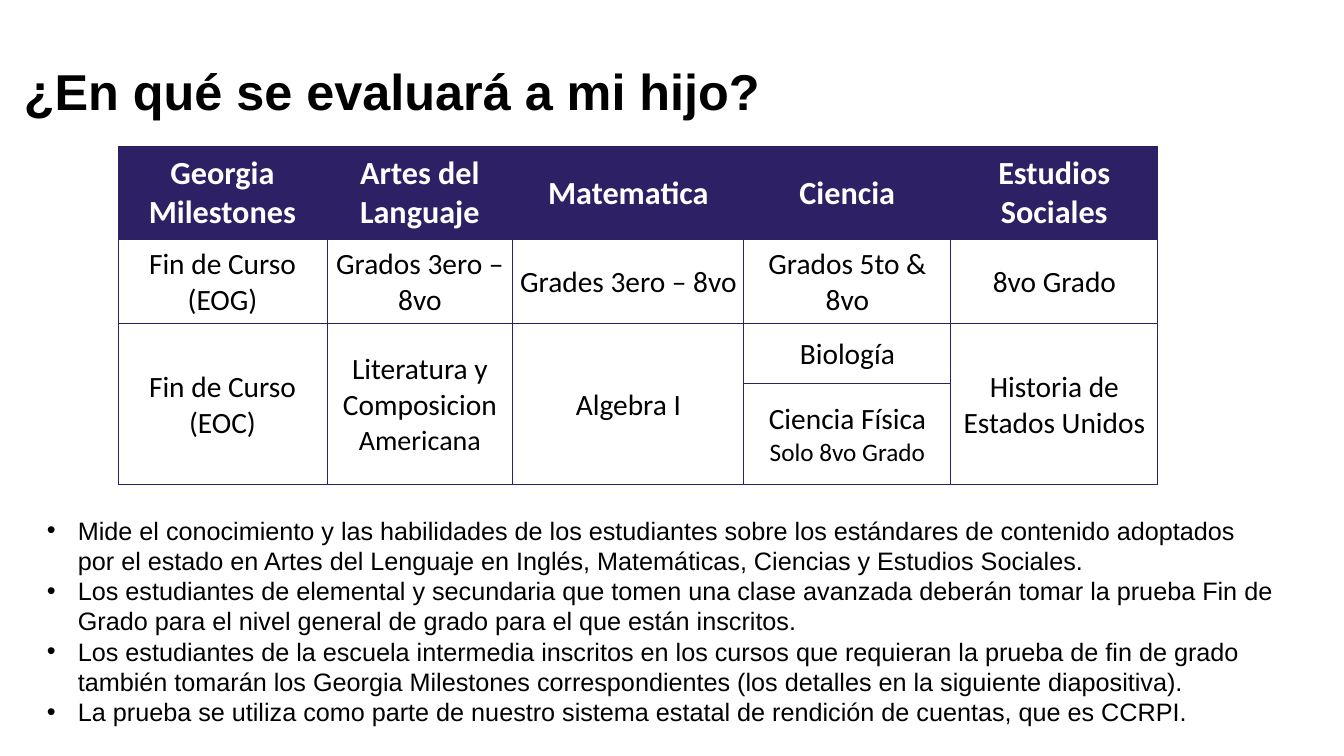
from lxml import etree
from pptx import Presentation
from pptx.dml.color import RGBColor
from pptx.enum.text import MSO_ANCHOR, PP_ALIGN
from pptx.oxml.ns import qn
from pptx.util import Emu, Pt

CENTER, LEFT = PP_ALIGN.CENTER, PP_ALIGN.LEFT
TOP, MIDDLE = MSO_ANCHOR.TOP, MSO_ANCHOR.MIDDLE
EMU_PER_PX = 914400 / 100.8
COLORS = {"ink": "000000", "paper": "FFFFFF", "purple": "2D2065"}

COLUMN_WIDTHS = [209, 186, 231, 207, 207]
ROW_HEIGHTS = [93, 85, 60, 101]
# Each cell is a list of paragraphs: text, or (text, size)
TABLE_ROWS = [
    [["Georgia Milestones"], ["Artes del Languaje"], ["Matematica"],
     ["Ciencia"], ["Estudios", "Sociales"]],
    [["Fin de Curso (EOG)"], ["Grados 3ero – 8vo"], ["Grades 3ero – 8vo"],
     ["Grados 5to & 8vo"], ["8vo Grado"]],
    [["Fin de Curso (EOC)"], ["Literatura y Composicion", ("Americana", 20)],
     ["Algebra I"], ["Biología"], ["Historia de Estados Unidos"]],
    [[], [], [], ["Ciencia Física", ("Solo 8vo Grado", 18)], []],
]
NOTES = [
    "Mide el conocimiento y las habilidades de los estudiantes sobre los "
    "estándares de contenido adoptados por el estado en Artes del Lenguaje "
    "en Inglés, Matemáticas, Ciencias y Estudios Sociales.",
    "Los estudiantes de elemental y secundaria que tomen una clase avanzada "
    "deberán tomar la prueba Fin de Grado para el nivel general de grado "
    "para el que están inscritos.",
    "Los estudiantes de la escuela intermedia inscritos en los cursos que "
    "requieran la prueba de fin de grado también tomarán los Georgia "
    "Milestones correspondientes (los detalles en la siguiente diapositiva).",
    "La prueba se utiliza como parte de nuestro sistema estatal de rendición "
    "de cuentas, que es CCRPI.",
]


def px(value):
    return Emu(round(value * EMU_PER_PX))


def color(name):
    return RGBColor.from_string(COLORS[name])


def add_bullet(paragraph, indent):
    properties = paragraph._p.get_or_add_pPr()
    properties.set("marL", str(px(indent)))
    properties.set("indent", str(-px(indent)))
    etree.SubElement(properties, qn("a:buFont"), typeface="Arial")
    etree.SubElement(properties, qn("a:buChar"), char="•")


def write_text(frame, paragraphs, size=18, font="Arial", ink="ink",
               bold=False, align=LEFT, spacing=None, bullet_indent=None):
    frame.word_wrap = True
    for index, item in enumerate(paragraphs):
        text, text_size = item if isinstance(item, tuple) else (item, size)
        paragraph = frame.paragraphs[0] if index == 0 else frame.add_paragraph()
        paragraph.alignment = align
        if spacing:
            paragraph.line_spacing = spacing
        if bullet_indent:
            add_bullet(paragraph, bullet_indent)
        run = paragraph.add_run()
        run.text = text
        run.font.name = font
        run.font.size = Pt(text_size)
        run.font.bold = bold
        run.font.color.rgb = color(ink)


def add_text_box(slide, left, top, width, height, paragraphs, **text_format):
    box = slide.shapes.add_textbox(px(left), px(top), px(width), px(height))
    box.text_frame.vertical_anchor = TOP
    write_text(box.text_frame, paragraphs, **text_format)


def add_borders(cell, name, width):
    properties = cell._tc.get_or_add_tcPr()
    for position, side in enumerate(("a:lnL", "a:lnR", "a:lnT", "a:lnB")):
        line = etree.Element(qn(side), w=str(Pt(width)))
        fill = etree.SubElement(line, qn("a:solidFill"))
        etree.SubElement(fill, qn("a:srgbClr"), val=COLORS[name])
        properties.insert(position, line)


def style_cell(cell, fill):
    cell.margin_left = cell.margin_right = px(5)
    cell.margin_top, cell.margin_bottom = px(7), px(6)
    cell.vertical_anchor = MIDDLE
    cell.fill.solid()
    cell.fill.fore_color.rgb = color(fill)
    add_borders(cell, "purple", 0.75)


def add_exam_table(slide, left, top):
    table = slide.shapes.add_table(
        len(ROW_HEIGHTS), len(COLUMN_WIDTHS), px(left), px(top),
        px(sum(COLUMN_WIDTHS)), px(sum(ROW_HEIGHTS))).table
    table.horz_banding = False
    for column, width in zip(table.columns, COLUMN_WIDTHS):
        column.width = px(width)
    for row, height in zip(table.rows, ROW_HEIGHTS):
        row.height = px(height)
    for row_index, row in enumerate(TABLE_ROWS):
        header = row_index == 0
        for column_index, paragraphs in enumerate(row):
            cell = table.cell(row_index, column_index)
            style_cell(cell, "purple" if header else "paper")
            write_text(cell.text_frame, paragraphs, font="Calibri",
                       size=23 if header else 21, bold=header, align=CENTER,
                       ink="paper" if header else "ink")
    # Only the science column keeps its last two rows apart
    for column_index, paragraphs in enumerate(TABLE_ROWS[3]):
        if not paragraphs:
            table.cell(2, column_index).merge(table.cell(3, column_index))


def main():
    presentation = Presentation()
    presentation.slide_width, presentation.slide_height = px(1344), px(756)
    slide = presentation.slides.add_slide(presentation.slide_layouts[6])

    # Title
    add_text_box(slide, 14, 62, 873, 96, ["¿En qué se evaluará a mi hijo?"],
                 size=36, bold=True, spacing=0.9)
    # Exams by subject
    add_exam_table(slide, 118, 146)
    # Explanatory bullets
    add_text_box(slide, 37, 510, 1248, 224, NOTES, bullet_indent=31)

    presentation.save("out.pptx")


if __name__ == "__main__":
    main()
